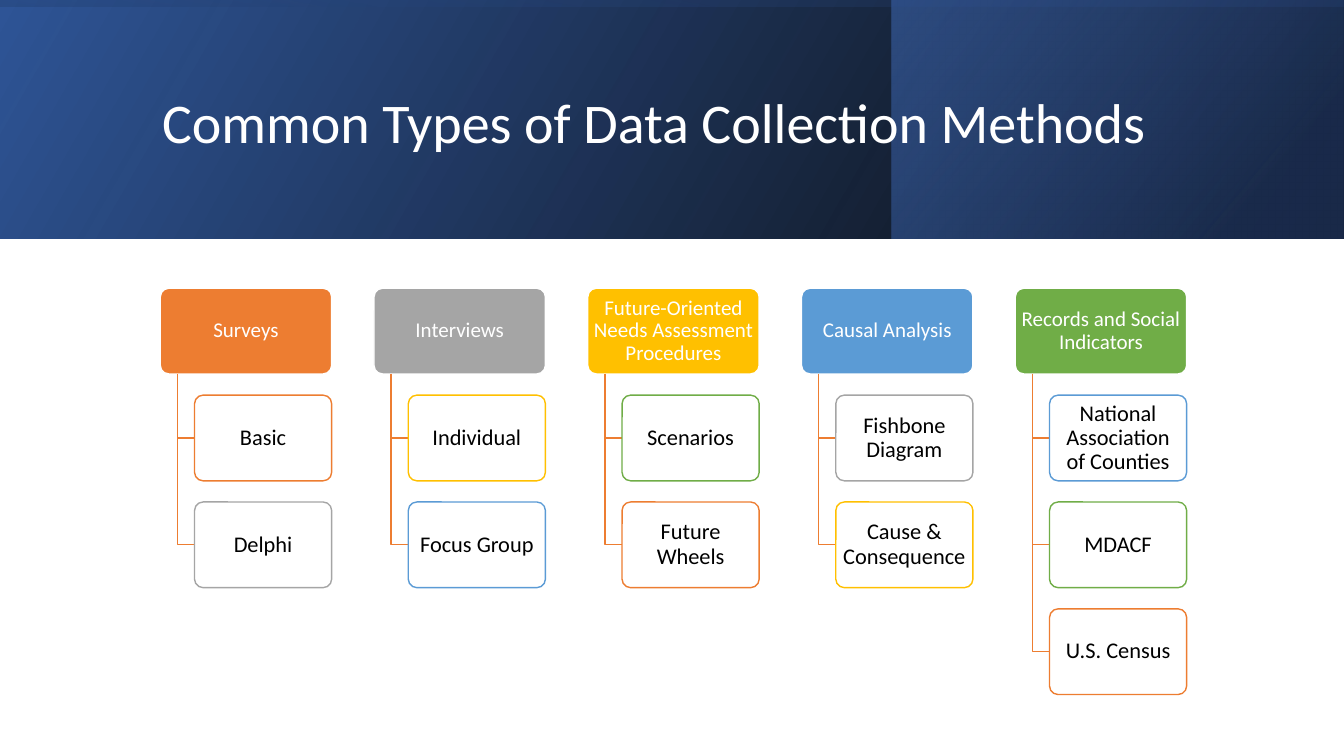
from dataclasses import dataclass
from itertools import cycle

from lxml import etree
from pptx import Presentation
from pptx import util as u
from pptx.dml.color import RGBColor
from pptx.enum import shapes, text
from pptx.oxml import parse_xml
from pptx.oxml.ns import nsdecls, qn


@dataclass(frozen=True)
class Theme:
    font: str = "Calibri"
    title_size: float = 40
    header_size: float = 15
    card_size: float = 16
    line_width: float = 1
    white: str = "FFFFFF"
    black: str = "000000"
    navy: str = "2F5597"
    deep_navy: str = "203864"
    blue: str = "4472C4"
    accents: tuple[str, ...] = ("ED7D31", "A5A5A5", "FFC000", "5B9BD5", "70AD47")


@dataclass(frozen=True)
class Grid:
    """Chart grid in inches: one column per method, one row per level."""
    left: float = 1.59
    top: float = 2.86
    col: float = 2.12
    row: float = 1.06
    header_w: float = 1.7
    card_w: float = 1.36
    box_h: float = 0.85
    indent: float = 0.17

    def x(self, col: int, indents: int = 0) -> float:
        return self.left + col * self.col + indents * self.indent

    def y(self, row: int) -> float:
        return self.top + row * self.row


@dataclass(frozen=True)
class Stop:
    pos: int
    color: str
    alpha: int = 100


@dataclass(frozen=True)
class Panel:
    box: tuple[float, float, float, float]
    stops: tuple[Stop, Stop]
    angle: int
    rotation: int = 0


@dataclass(frozen=True)
class Method:
    name: str
    examples: tuple[str, ...]


T = Theme()
G = Grid()
W, H = 13.33, 7.5
BAND = 2.37

PANELS = (
    Panel((0, 0, W, BAND), (Stop(0, T.black, 96), Stop(100, T.navy)), 330),
    Panel((8.84, 0, 4.48, BAND), (Stop(19, T.deep_navy, 68), Stop(100, T.blue, 48)), 320),
    Panel(((W - BAND) / 2, (BAND - W) / 2, BAND, W),
          (Stop(23, T.navy, 16), Stop(99, T.black, 45)), 350, 270),
)
METHODS = (
    Method("Surveys", ("Basic", "Delphi")),
    Method("Interviews", ("Individual", "Focus Group")),
    Method("Future-Oriented Needs Assessment Procedures", ("Scenarios", "Future Wheels")),
    Method("Causal Analysis", ("Fishbone Diagram", "Cause & Consequence")),
    Method("Records and Social Indicators",
           ("National Association of Counties", "MDACF", "U.S. Census")),
)


def rgb(color: str) -> RGBColor:
    return RGBColor.from_string(color)


def add_panel(slide, panel: Panel) -> None:
    sp = slide.shapes.add_shape(shapes.MSO_SHAPE.RECTANGLE, *map(u.Inches, panel.box))
    sp.shadow.inherit = False
    sp.line.fill.background()
    sp.rotation = panel.rotation
    sp.fill.background()
    spPr = sp._element.spPr
    spPr.find(qn("a:xfrm")).set("flipH", "1")
    stops = "".join(
        f'<a:gs pos="{s.pos * 1000}"><a:srgbClr val="{s.color}">'
        f'<a:alpha val="{s.alpha * 1000}"/></a:srgbClr></a:gs>' for s in panel.stops)
    spPr.replace(spPr.find(qn("a:noFill")), parse_xml(
        f'<a:gradFill {nsdecls("a")} rotWithShape="1"><a:gsLst>{stops}</a:gsLst>'
        f'<a:lin ang="{panel.angle * 60000}" scaled="0"/></a:gradFill>'))


def set_text(sp, words: str, size: float, color: str, align: text.PP_ALIGN) -> None:
    tf = sp.text_frame
    tf.word_wrap = True
    tf.vertical_anchor = text.MSO_ANCHOR.MIDDLE
    p = tf.paragraphs[0]
    p.text = words
    p.alignment = align
    p.line_spacing = 0.9
    p.font.name, p.font.size = T.font, u.Pt(size)
    p.font.color.rgb = rgb(color)


def add_box(slide, x: float, y: float, width: float, words: str, size: float,
            color: str, fill: str, line: str, alpha: int = 100) -> None:
    sp = slide.shapes.add_shape(shapes.MSO_SHAPE.ROUNDED_RECTANGLE,
                                *map(u.Inches, (x, y, width, G.box_h)))
    sp.adjustments[0] = 0.1
    sp.shadow.inherit = False
    sp.fill.solid()
    sp.fill.fore_color.rgb = rgb(fill)
    if alpha < 100:
        clr = sp._element.spPr.find(qn("a:solidFill"))[0]
        etree.SubElement(clr, qn("a:alpha")).set("val", str(alpha * 1000))
    sp.line.color.rgb = rgb(line)
    sp.line.width = u.Pt(T.line_width)
    tf = sp.text_frame
    tf.margin_left = tf.margin_right = u.Inches(0.03)
    tf.margin_top = tf.margin_bottom = u.Inches(0.02)
    set_text(sp, words, size, color, text.PP_ALIGN.CENTER)


def add_branch(slide, col: int, row: int) -> None:
    trunk, card = u.Inches(G.x(col, 1)), u.Inches(G.x(col, 2))
    start = u.Inches(G.top + G.box_h)
    middle = u.Inches(G.y(row) + G.box_h / 2)
    builder = slide.shapes.build_freeform(trunk, start)
    builder.add_line_segments([(trunk, middle), (card, middle)], close=False)
    sp = builder.convert_to_shape()
    sp.shadow.inherit = False
    sp.fill.background()
    sp.line.color.rgb = rgb(T.accents[0])
    sp.line.width = u.Pt(T.line_width)


def main() -> None:
    prs = Presentation()
    prs.slide_width, prs.slide_height = u.Inches(W), u.Inches(H)
    slide = prs.slides.add_slide(prs.slide_layouts[6])

    # Title band
    for panel in PANELS:
        add_panel(slide, panel)
    title = slide.shapes.add_textbox(*map(u.Inches, (1.51, 0.38, 10.63, 1.72)))
    set_text(title, "Common Types of Data Collection Methods",
             T.title_size, T.white, text.PP_ALIGN.LEFT)

    # Methods with their examples; card outlines run through the accents
    outlines = cycle(T.accents)
    for col, (method, accent) in enumerate(zip(METHODS, T.accents)):
        add_box(slide, G.x(col), G.top, G.header_w, method.name,
                T.header_size, T.white, accent, T.white)
        for row, example in enumerate(method.examples, start=1):
            add_branch(slide, col, row)
            add_box(slide, G.x(col, 2), G.y(row), G.card_w, example,
                    T.card_size, T.black, T.white, next(outlines), alpha=90)

    prs.save("out.pptx")


if __name__ == "__main__":
    main()
